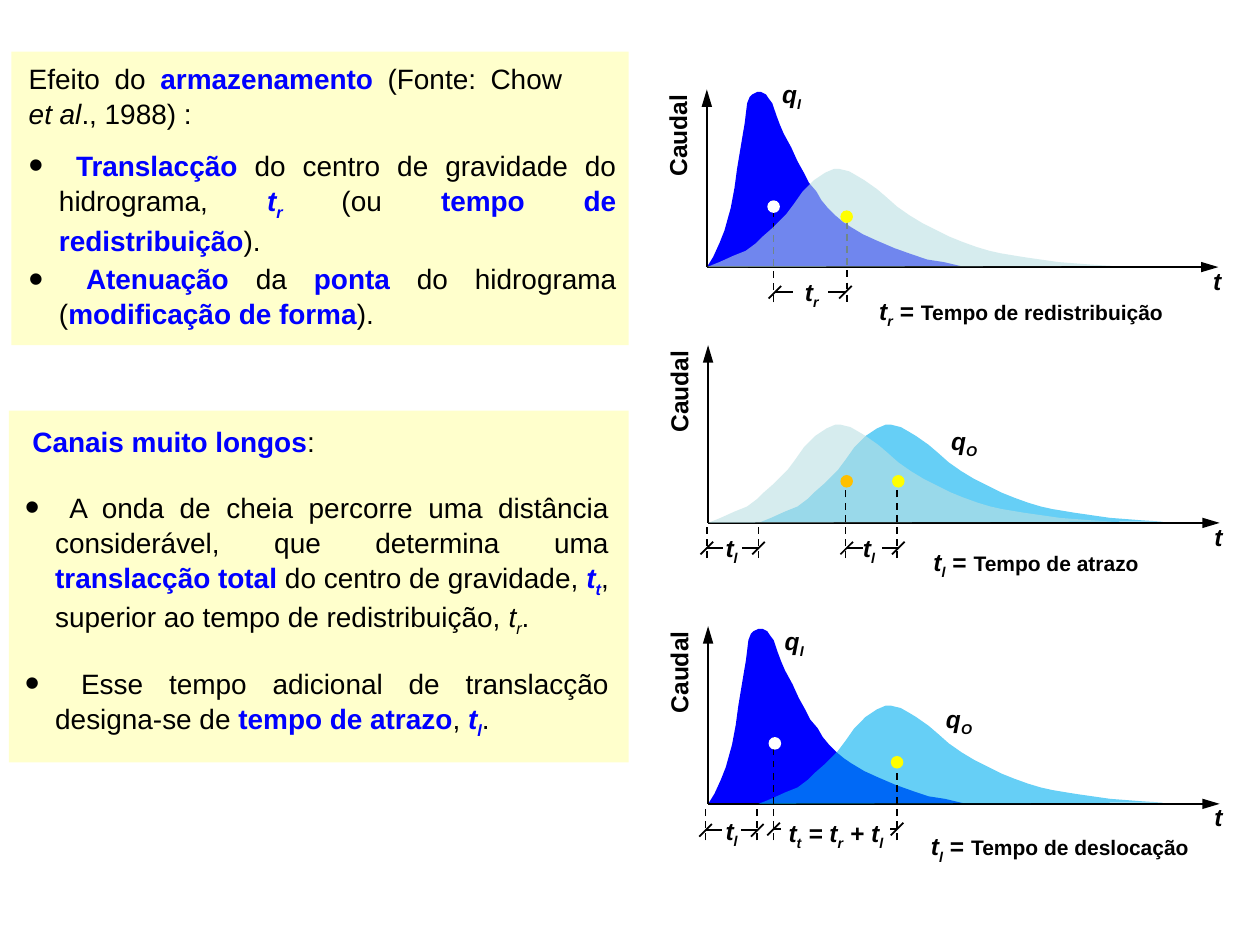
import pptx
import pptx.util
import pptx.dml.color
import pptx.enum.dml
import pptx.enum.shapes
import pptx.enum.text
import pptx.oxml.ns
from lxml import etree

Inches = pptx.util.Inches
Pt = pptx.util.Pt

COLORS = {"black": "000000", "blue": "0000FF", "panel": "FFFFCC", "sky": "00B0F0",
          "mist": "BBE0E3", "white": "FFFFFF", "yellow": "FFFF00", "orange": "FFC000"}

# Offsets from each curve's starting point, in inches: (time, flow)
INFLOW = [(0, 0), (.05, .08), (.1, .19), (.14, .29), (.19, .47), (.22, .63), (.24, .78),
          (.27, .96), (.3, 1.14), (.32, 1.3), (.34, 1.35), (.36, 1.37), (.4, 1.39),
          (.43, 1.39), (.47, 1.37), (.49, 1.34), (.52, 1.3), (.55, 1.21), (.58, 1.13),
          (.61, 1.06), (.67, .95), (.72, .84), (.77, .75), (.81, .67), (.87, .6),
          (.91, .53), (.96, .47), (1.02, .41), (1.08, .36), (1.14, .32), (1.24, .26),
          (1.35, .21), (1.49, .15), (1.63, .1), (1.75, .06), (1.88, .04), (2.05, 0)]
OUTFLOW = [(0, 0), (.1, .04), (.21, .09), (.31, .13), (.39, .19), (.44, .24), (.52, .31),
           (.59, .38), (.63, .42), (.69, .5), (.76, .6), (.85, .69), (.94, .75),
           (1.01, .78), (1.05, .78), (1.13, .76), (1.2, .72), (1.25, .69), (1.35, .62),
           (1.42, .56), (1.51, .48), (1.61, .41), (1.71, .35), (1.81, .3), (1.93, .24),
           (2.03, .2), (2.14, .16), (2.24, .13), (2.33, .11), (2.51, .08), (2.79, .04),
           (3.05, .02), (3.21, .01)]


def symbol(letter, index):
    return [(letter, "bi"), (index, "bis")]


def definition(index, meaning):
    return symbol("t", index) + [(" = ", "b"), (meaning, "b", 12)]


class SlideBuilder:
    font = "Arial"

    def __init__(self, slide):
        self.slide = slide
        self.shapes = slide.shapes

    def color(self, name):
        return pptx.dml.color.RGBColor.from_string(COLORS[name])

    def paint(self, shape, color):
        shape.shadow.inherit = False
        shape.fill.solid()
        shape.fill.fore_color.rgb = self.color(color)
        shape.line.fill.background()

    def preset(self, kind, left, top, width, height, color):
        shape = self.shapes.add_shape(kind, Inches(left), Inches(top),
                                      Inches(width), Inches(height))
        self.paint(shape, color)

    def panel(self, left, top, width, height):
        self.preset(pptx.enum.shapes.MSO_SHAPE.RECTANGLE, left, top, width, height, "panel")

    def centroid(self, x, y, color):
        self.preset(pptx.enum.shapes.MSO_SHAPE.OVAL, x - .05, y - .05, .1, .1, color)

    def curve(self, offsets, left, base, color, opacity=100):
        points = [(Inches(left + x), Inches(base - y)) for x, y in offsets]
        builder = self.shapes.build_freeform(*points[0])
        builder.add_line_segments(points[1:], close=True)
        shape = builder.convert_to_shape()
        self.paint(shape, color)
        if opacity < 100:
            rgb = shape.fill._xPr.find(".//" + pptx.oxml.ns.qn("a:srgbClr"))
            etree.SubElement(rgb, pptx.oxml.ns.qn("a:alpha"), val=str(opacity * 1000))

    def line(self, x1, y1, x2, y2, width=1, dashed=False, arrow=False):
        connector = self.shapes.add_connector(
            pptx.enum.shapes.MSO_CONNECTOR.STRAIGHT,
            Inches(x1), Inches(y1), Inches(x2), Inches(y2))
        connector.line.color.rgb = self.color("black")
        connector.line.width = Pt(width)
        if dashed:
            connector.line.dash_style = pptx.enum.dml.MSO_LINE.DASH
        if arrow:
            etree.SubElement(connector.line._get_or_add_ln(), pptx.oxml.ns.qn("a:tailEnd"),
                             type="triangle", w="med", len="lg")
        etree.SubElement(connector._element.spPr, pptx.oxml.ns.qn("a:effectLst"))

    def dimension(self, left, right, y, stub=.13, dashed=False):
        """Span between two times: a slash at each end and short inward stubs."""
        for x, inward in ((left, stub), (right, -stub)):
            self.line(x + .05, y - .05, x - .05, y + .05)
            self.line(x, y, x + inward, y, dashed=dashed)

    def text(self, left, top, width, height, runs, size=14, wrap=False):
        """Runs are (text, style, size); style letters: b bold, i italic, s subscript, c blue."""
        box = self.shapes.add_textbox(Inches(left), Inches(top), Inches(width), Inches(height))
        frame = box.text_frame
        frame.word_wrap = wrap
        frame.auto_size = pptx.enum.text.MSO_AUTO_SIZE.SHAPE_TO_FIT_TEXT
        paragraph = frame.paragraphs[0]
        for content, style, *own_size in runs:
            run = paragraph.add_run()
            run.text = content
            run.font.name = self.font
            run.font.size = Pt(own_size[0] if own_size else size)
            run.font.bold = "b" in style
            run.font.italic = "i" in style
            run.font.color.rgb = self.color("blue" if "c" in style else "black")
            if "s" in style:
                run._r.get_or_add_rPr().set("baseline", "-25000")
        return box

    def body(self, left, top, width, height, runs, bullet=False):
        box = self.text(left, top, width, height, runs, size=16, wrap=True)
        paragraph = box.text_frame.paragraphs[0]
        paragraph.alignment = pptx.enum.text.PP_ALIGN.JUSTIFY
        paragraph.line_spacing = 1.04
        if bullet:
            properties = paragraph._p.get_or_add_pPr()
            properties.set("marL", str(Inches(.24)))
            properties.set("indent", str(-Inches(.24)))
            for tag, attribute, value in (("a:buSzPct", "val", "150000"),
                                          ("a:buFont", "typeface", self.font),
                                          ("a:buChar", "char", "•")):
                etree.SubElement(properties, pptx.oxml.ns.qn(tag)).set(attribute, value)

    def label(self, left, top, width, runs):
        return self.text(left, top, width, .34, runs)

    def axes(self, left, base):
        self.line(left, base, left + 4.06, base, 1.5, arrow=True)
        self.line(left, base, left, base - 1.41, 1.5, arrow=True)
        self.label(left - .66, base - 1.22, .86, [("Caudal", "b")]).rotation = 270
        self.label(left + 3.92, base - .06, .32, [("t", "bi")])


def main():
    presentation = pptx.Presentation()
    presentation.slide_width, presentation.slide_height = Inches(10), Inches(7.5)
    builder = SlideBuilder(presentation.slides.add_slide(presentation.slide_layouts[6]))

    # Storage effect
    builder.panel(.09, .41, 4.9, 2.33)
    builder.body(.13, .43, 4.43, .64, [
        ("Efeito do ", ""), ("armazenamento ", "bc"), ("(Fonte: Chow ", ""),
        ("et al", "i"), ("., 1988) :", "")])
    builder.body(.13, 1.12, 4.86, .64, [
        (" ", ""), ("Translacção", "bc"), (" do centro de gravidade do hidrograma, ", ""),
        ("t", "bic"), ("r", "bics"), (" (ou ", ""), ("tempo de redistribuição", "bc"),
        (").", "")], bullet=True)
    builder.body(.13, 2.02, 4.86, .64, [
        (" ", ""), ("Atenuação ", "bc"), ("da ", ""), ("ponta", "bc"),
        (" do hidrograma (", ""), ("modificação de forma", "bc"), (").", "")], bullet=True)

    # Very long channels
    builder.panel(.07, 3.26, 4.92, 2.79)
    builder.body(.16, 3.31, 4.83, .37, [("Canais muito longos", "bc"), (":", "")])
    builder.body(.1, 3.83, 4.83, 1.18, [
        (" A onda de cheia percorre uma distância considerável, que determina uma ", ""),
        ("translacção total", "bc"), (" do centro de gravidade, ", ""), ("t", "bic"),
        ("t", "bics"), (", superior ao tempo de redistribuição, ", ""), ("t", "i"),
        ("r", "is"), (".", "")], bullet=True)
    builder.body(.1, 5.23, 4.83, .64, [
        (" Esse tempo adicional de translacção designa-se de ", ""),
        ("tempo de atrazo", "bc"), (", ", ""), ("t", "bic"), ("l", "bics"), (".", "")],
        bullet=True)

    # Redistribution time
    builder.curve(INFLOW, 5.61, 2.12, "blue")
    builder.axes(5.61, 2.12)
    builder.label(6.11, .58, .37, symbol("q", "I"))
    builder.label(6.29, 2.15, .35, symbol("t", "r"))
    builder.line(6.14, 2.4, 6.14, 1.59, dashed=True)
    builder.line(6.72, 1.76, 6.72, 2.4, dashed=True)
    builder.dimension(6.15, 6.71, 2.32, .14)
    builder.label(6.88, 2.3, 2.53, definition("r", "Tempo de redistribuição"))
    builder.centroid(6.14, 1.64, "white")
    builder.curve(OUTFLOW, 5.61, 2.12, "mist", 60)
    builder.centroid(6.72, 1.72, "yellow")

    # Lag time
    builder.curve(OUTFLOW, 6.02, 4.15, "sky", 60)
    builder.axes(5.62, 4.15)
    builder.curve(OUTFLOW, 5.62, 4.15, "mist", 60)
    builder.label(7.45, 3.33, .44, symbol("q", "O"))
    for x, top in ((5.61, 4.15), (6.02, 4.15), (6.71, 3.84), (7.12, 3.84)):
        builder.line(x, 4.43, x, top, dashed=True)
    for left in (5.61, 6.72):
        builder.dimension(left, left + .41, 4.35)
    builder.label(5.66, 4.18, .35, symbol("t", "l"))
    builder.label(6.75, 4.18, .35, symbol("t", "l"))
    builder.label(7.31, 4.29, 1.87, definition("l", "Tempo de atrazo"))
    builder.centroid(6.72, 3.82, "orange")
    builder.centroid(7.13, 3.82, "yellow")

    # Total displacement time
    builder.curve(INFLOW, 5.62, 6.38, "blue")
    builder.axes(5.62, 6.38)
    builder.curve(OUTFLOW, 6.02, 6.38, "sky", 60)
    builder.label(7.41, 5.54, .44, symbol("q", "O"))
    builder.label(6.13, 4.92, .37, symbol("q", "I"))
    builder.label(7.29, 6.55, 2.34, definition("l", "Tempo de deslocação"))
    for x, top in ((5.6, 6.4), (6.01, 6.4), (6.14, 5.85), (7.12, 6.06)):
        builder.line(x, 6.67, x, top, dashed=True)
    builder.dimension(5.6, 6.01, 6.59)
    builder.dimension(6.14, 7.12, 6.58, .07, dashed=True)
    builder.label(5.66, 6.43, .35, symbol("t", "l"))
    builder.label(6.16, 6.44, .99, symbol("t", "t") + symbol(" = t", "r") + symbol(" + t", "l"))
    builder.centroid(6.15, 5.9, "white")
    builder.centroid(7.12, 6.05, "yellow")

    presentation.save("out.pptx")


if __name__ == "__main__":
    main()
